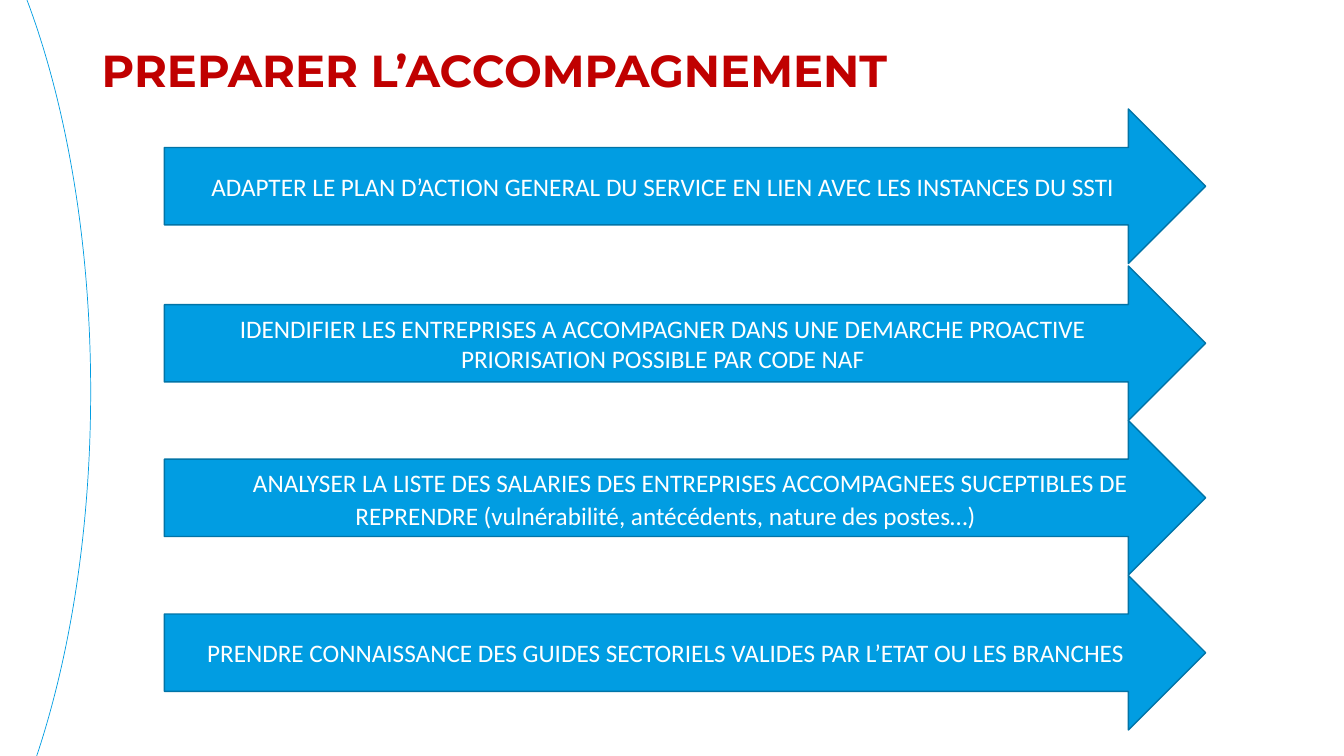
"""Build the slide on preparing the support programme: a title and four arrows."""
from pptx import Presentation
from pptx.dml.color import RGBColor
from pptx.enum.shapes import MSO_SHAPE as Preset
from pptx.enum.text import MSO_ANCHOR as Anchor, PP_ALIGN as Align
from pptx.util import Pt

TITLE = "PREPARER L’ACCOMPAGNEMENT"
TITLE_BOX = (65.5, 31, 745.2, 48.2)
CENTRED = {"alignment": Align.CENTER}
SPACED = {"alignment": Align.CENTER, "line_spacing": 1.07,
          "space_before": Pt(5), "space_after": Pt(8)}
STEPS = [
    (77.8, 0, CENTRED, ["ADAPTER LE PLAN D’ACTION GENERAL DU SERVICE EN LIEN AVEC LES INSTANCES DU SSTI "]),
    (190, 0, CENTRED, ["IDENDIFIER LES ENTREPRISES A ACCOMPAGNER DANS UNE DEMARCHE PROACTIVE ",
                       "PRIORISATION POSSIBLE PAR CODE NAF "]),
    (300.4, 35.3, SPACED, ["ANALYSER LA LISTE DES SALARIES DES ENTREPRISES ACCOMPAGNEES SUCEPTIBLES DE "
                           "REPRENDRE (vulnérabilité, antécédents, nature des postes…)"]),
    (411, 0, CENTRED, ["PRENDRE CONNAISSANCE DES GUIDES SECTORIELS VALIDES PAR L’ETAT OU LES BRANCHES"]),
]
ARROW_LEFT, ARROW_WIDTH, ARROW_HEIGHT = 117.4, 743.8, 110.4
ARC_BOX, ARC_ANGLES = (-318.2, -152.6, 383, 864.7), (178.34, 35.86)
BLUE, DARK_BLUE, RED, WHITE = "019DE2", "0174A7", "C00000", "FFFFFF"
TITLE_FONT = {"name": "Montserrat", "size": Pt(32), "bold": True}
STEP_FONT = {"name": "Calibri", "size": Pt(18)}


def paint(color_format, color):
    color_format.rgb = RGBColor.from_string(color)


def apply(target, values):
    for name, value in values.items():
        setattr(target, name, value)


def add_preset(slide, preset, box, line_color, line_width, fill=None):
    shape = slide.shapes.add_shape(preset, *map(Pt, box))
    shape.shadow.inherit = False
    if fill:
        shape.fill.solid()
        paint(shape.fill.fore_color, fill)
    else:
        shape.fill.background()
    paint(shape.line.color, line_color)
    shape.line.width = Pt(line_width)
    return shape


def write(frame, texts, font, color, layout, indent=0):
    frame.word_wrap = True
    for index, text in enumerate(texts):
        paragraph = frame.add_paragraph() if index else frame.paragraphs[0]
        apply(paragraph, layout)
        if indent:
            properties = paragraph._p.get_or_add_pPr()
            properties.set("marL", "0")
            properties.set("indent", str(Pt(indent)))
        run = paragraph.add_run()
        run.text = text
        apply(run.font, font)
        paint(run.font.color, color)


def main():
    presentation = Presentation()
    presentation.slide_width, presentation.slide_height = Pt(960), Pt(540)
    slide = presentation.slides.add_slide(presentation.slide_layouts[6])

    arc = add_preset(slide, Preset.ARC, ARC_BOX, BLUE, 0.5)
    for index, angle in enumerate(ARC_ANGLES):
        arc.adjustments[index] = angle

    title = slide.shapes.add_textbox(*map(Pt, TITLE_BOX))
    write(title.text_frame, [TITLE], TITLE_FONT, RED, {"line_spacing": 0.9, "space_before": Pt(10)})

    for top, indent, layout, texts in STEPS:
        box = (ARROW_LEFT, top, ARROW_WIDTH, ARROW_HEIGHT)
        arrow = add_preset(slide, Preset.RIGHT_ARROW, box, DARK_BLUE, 1, BLUE)
        arrow.text_frame.vertical_anchor = Anchor.MIDDLE
        write(arrow.text_frame, texts, STEP_FONT, WHITE, layout, indent)

    presentation.save("out.pptx")


if __name__ == "__main__":
    main()
